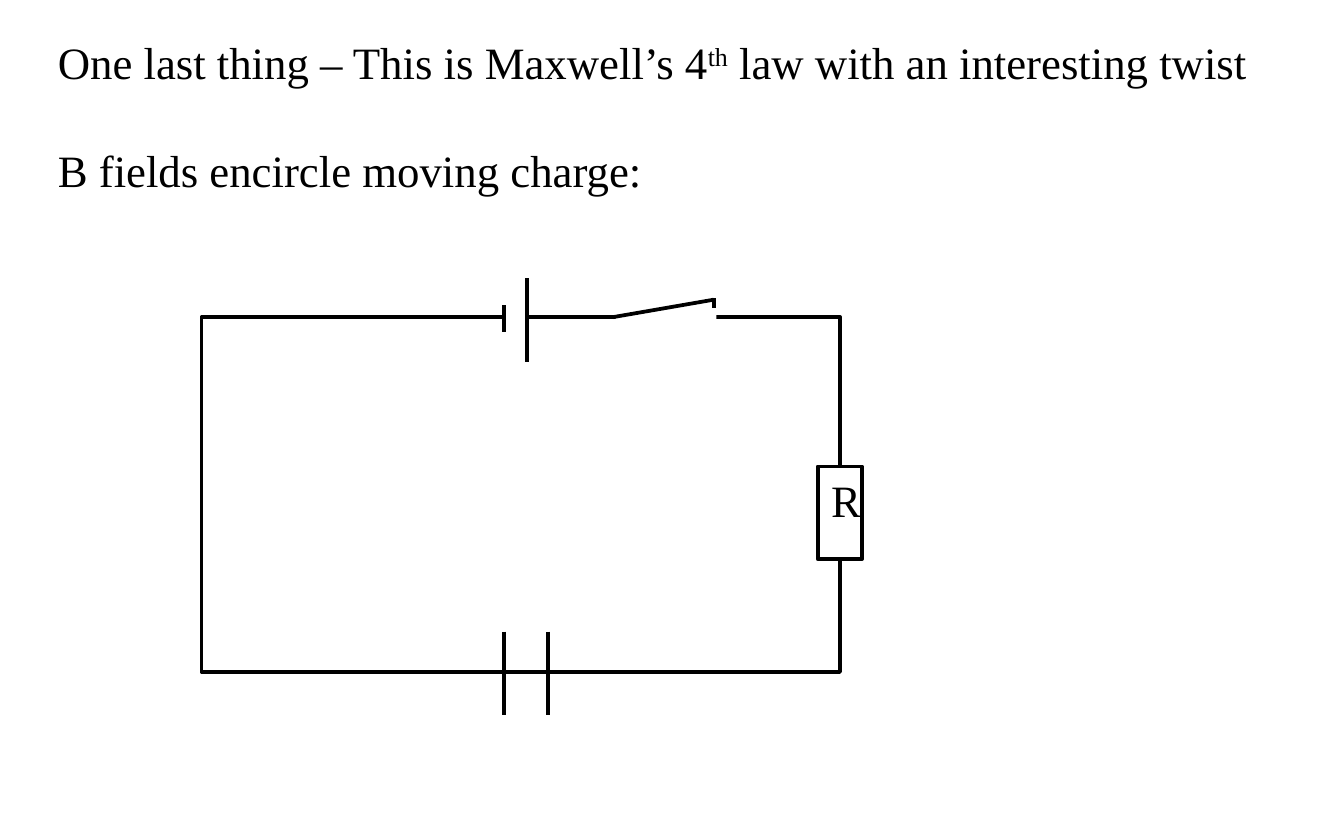
from typing import NamedTuple

from pptx import Presentation
from pptx.dml.color import RGBColor as Rgb
from pptx.enum.shapes import MSO_CONNECTOR as Conn, MSO_SHAPE as Kind
from pptx.enum.text import MSO_ANCHOR as Anchor, MSO_AUTO_SIZE as Fit, PP_ALIGN as Align
from pptx.oxml.ns import qn
from pptx.util import Inches, Pt

COLORS = {"ink": "000000", "paper": "FFFFFF"}
FONT = "Times New Roman"


class Box(NamedTuple):
    left: float
    top: float
    width: float
    height: float
    fill: bool = True
    line: bool = False


class Wire(NamedTuple):
    x1: float
    y1: float
    x2: float
    y2: float


def color(name: str) -> Rgb:
    return Rgb.from_string(COLORS[name])


def add_box(slide, box: Box):
    shape = slide.shapes.add_shape(Kind.RECTANGLE, *map(Inches, box[:4]))
    shape.shadow.inherit = False
    if box.fill:
        shape.fill.solid()
        shape.fill.fore_color.rgb = color("paper")
    else:
        shape.fill.background()
    if box.line:
        shape.line.color.rgb = color("ink")
        shape.line.width = Pt(2)
    else:
        shape.line.fill.background()
    return shape


def add_wire(slide, wire: Wire) -> None:
    line = slide.shapes.add_connector(Conn.STRAIGHT, *map(Inches, wire))
    line.line.color.rgb = color("ink")
    line.line.width = Pt(2)
    props = line._element.spPr
    props.append(props.makeelement(qn("a:effectLst"), {}))


def add_run(para, text: str, base: int = 0) -> None:
    run = para.add_run()
    run.text = text
    run.font.name = FONT
    run.font.size = Pt(24)
    run.font.color.rgb = color("ink")
    if base:
        run._r.get_or_add_rPr().set("baseline", str(base * 1000))


def set_frame(frame) -> None:
    frame.word_wrap = True
    frame.auto_size = Fit.NONE
    frame.vertical_anchor = Anchor.TOP
    frame.paragraphs[0].alignment = Align.LEFT


def main() -> None:
    deck = Presentation()
    deck.slide_width, deck.slide_height = Inches(10), Inches(6.25)
    slide = deck.slides.add_slide(deck.slide_layouts[5])

    # Heading
    title = slide.shapes.title
    title.left, title.top = Inches(0.33), Inches(0.21)
    title.width, title.height = Inches(9.25), Inches(1.72)
    frame = title.text_frame
    set_frame(frame)
    first = frame.paragraphs[0]
    add_run(first, "One last thing – This is Maxwell’s 4")
    add_run(first, "th", 30)
    add_run(first, " law with an interesting twist")
    second = frame.add_paragraph()
    second.alignment = Align.LEFT
    second.space_before = Pt(29)
    add_run(second, "B fields encircle moving charge:")

    # Circuit loop
    loop = Box(1.5, 2.36, 4.75, 2.64, fill=False, line=True)
    add_box(slide, loop)

    # Capacitor plates
    for x in (3.75, 4.08):
        add_wire(slide, Wire(x, 4.7, x, 5.32))

    # Resistor, centred on the right side of the loop
    wide = 0.33
    right = loop.left + loop.width
    part = add_box(slide, Box(right - wide / 2, 3.47, wide, 0.69, line=True))
    set_frame(part.text_frame)
    add_run(part.text_frame.paragraphs[0], "R")

    # Battery: gap in the loop, short and long plate
    add_box(slide, Box(3.75, 2.08, 0.17, 0.54))
    add_wire(slide, Wire(3.75, 2.27, 3.75, 2.47))
    add_wire(slide, Wire(3.92, 2.07, 3.92, 2.69))

    # Open switch: gap in the loop, lever and tip
    add_box(slide, Box(4.58, 2.14, 0.75, 0.28))
    add_wire(slide, Wire(4.56, loop.top, 5.31, 2.23))
    add_wire(slide, Wire(5.31, 2.22, 5.31, 2.29))

    deck.save("out.pptx")


if __name__ == "__main__":
    main()
